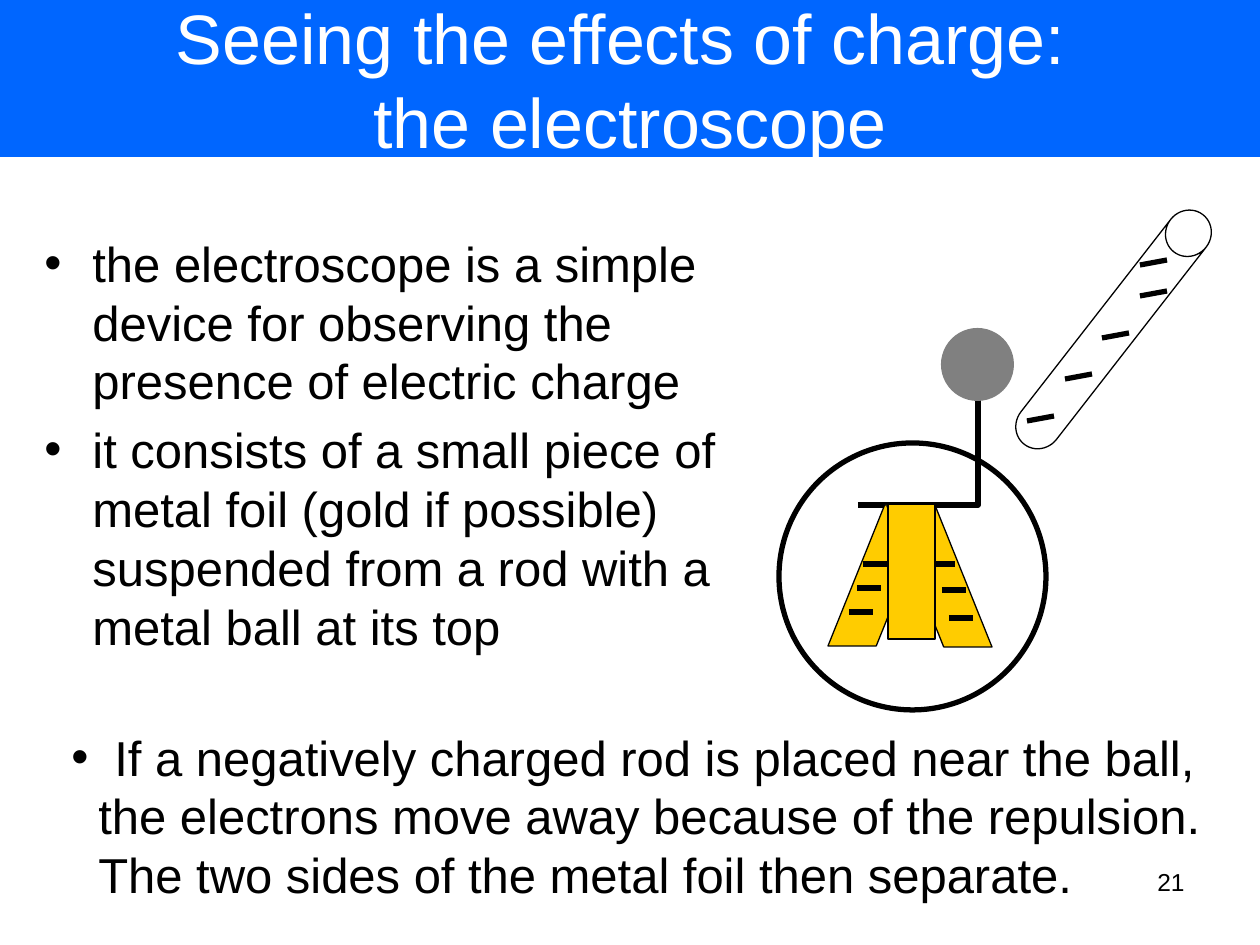
"""Build a slide that explains the electroscope."""
import pptx
import pptx.dml.color
import pptx.enum.shapes
import pptx.enum.text
import pptx.oxml
import pptx.util
from dataclasses import dataclass


@dataclass(frozen=True)
class Theme:
    font: str = "Arial"
    blue: str = "0066FF"
    gold: str = "FFCC00"
    gray: str = "808080"
    black: str = "000000"
    white: str = "FFFFFF"
    head: int = 40
    body: int = 28
    note: int = 14
    thin: float = 0.75
    thick: int = 3


THEME = Theme()
KIND = pptx.enum.shapes.MSO_SHAPE
ALIGN = pptx.enum.text.PP_ALIGN
ANCHOR = pptx.enum.text.MSO_ANCHOR
FIT = pptx.enum.text.MSO_AUTO_SIZE
NS = 'xmlns:a="http://schemas.openxmlformats.org/drawingml/2006/main"'

TITLE = "Seeing the effects of charge: \vthe electroscope"
FACTS = [
    "the electroscope is a simple device for observing the presence of electric charge",
    "it consists of a small piece of metal foil (gold if possible) "
    "suspended from a rod with a metal ball at its top",
]
EFFECT = [
    "If a negatively charged rod is placed near the ball,",
    "the electrons move away because of the repulsion.",
    "The two sides of the metal foil then separate.",
]
NUMBER = "21"

WIRE = [(858, 505), (978, 505), (978, 398)]
BALL = (941, 328, 73, 73)
ROD = (1091, 184, 45, 291)
LEAVES = [((828, 505, 105, 141), False), ((887, 506, 105, 141), True)]
STEM = (888, 504, 47, 135)
CASE = (779, 443, 267, 267)
MARKS = [
    ((27, -5), [(1027, 421), (1065, 379), (1102, 338), (1140, 296), (1140, 265)]),
    ((24, 0), [(849, 612), (857, 588), (863, 564),
               (949, 618), (942, 590), (931, 564)]),
]


def px(n):
    return pptx.util.Emu(round(n * 914400 / 126))


def rgb(code):
    return pptx.dml.color.RGBColor.from_string(code)


def paint(shape, fill=None, line=None):
    shape.shadow.inherit = False
    if fill:
        shape.fill.solid()
        shape.fill.fore_color.rgb = rgb(fill)
    else:
        shape.fill.background()
    if line:
        shape.line.color.rgb = rgb(THEME.black)
        shape.line.width = pptx.util.Pt(line)
    else:
        shape.line.fill.background()
    return shape


def draw(slide, kind, box, fill=None, line=None):
    shape = slide.shapes.add_shape(kind, *map(px, box))
    return paint(shape, fill, line)


def write(para, text, size=THEME.body, color=THEME.black, align=ALIGN.LEFT,
          left=0, hang=0, gap=0):
    para.text = text
    para.alignment = align
    para.space_before = pptx.util.Pt(gap)
    for run in para.runs:
        run.font.name = THEME.font
        run.font.size = pptx.util.Pt(size)
        run.font.color.rgb = rgb(color)
    props = para._p.get_or_add_pPr()
    props.set("marL", str(px(left)))
    props.set("indent", str(-px(hang)))
    if hang:
        props.append(pptx.oxml.parse_xml(f'<a:buFont {NS} typeface="{THEME.font}"/>'))
        props.append(pptx.oxml.parse_xml(f'<a:buChar {NS} char="•"/>'))


def frame(slide, box, wrap=True):
    text = slide.shapes.add_textbox(*map(px, box)).text_frame
    text.word_wrap = wrap
    return text


def fill_up(text, items):
    for i, (line, style) in enumerate(items):
        para = text.add_paragraph() if i else text.paragraphs[0]
        write(para, line, **style)


def tell(slide):
    head = slide.shapes.title
    head.left, head.top, head.width, head.height = map(px, (0, 0, 1260, 157))
    paint(head, THEME.blue)
    head.text_frame.auto_size = FIT.NONE
    head.text_frame.vertical_anchor = ANCHOR.MIDDLE
    write(head.text_frame.paragraphs[0], TITLE, size=THEME.head,
          color=THEME.white, align=ALIGN.CENTER)

    style = dict(left=48, hang=48, gap=THEME.body / 5)
    fill_up(frame(slide, (32, 227, 714, 474)), [(fact, style) for fact in FACTS])

    note = frame(slide, (59, 721, 1158, 189), wrap=False)
    note.auto_size = FIT.SHAPE_TO_FIT_TEXT
    styles = [dict(left=43, hang=43), dict(left=27), dict(left=27)]
    fill_up(note, zip(EFFECT, styles))

    page = frame(slide, (903, 861, 294, 66))
    write(page.paragraphs[0], NUMBER, size=THEME.note, align=ALIGN.RIGHT)


def mark(slide, start, step):
    x, y = start
    ends = (x, y, x + step[0], y + step[1])
    line = slide.shapes.add_connector(
        pptx.enum.shapes.MSO_CONNECTOR.STRAIGHT, *map(px, ends))
    line.line.color.rgb = rgb(THEME.black)
    line.line.width = pptx.util.Pt(THEME.thick)
    line._element.spPr.append(pptx.oxml.parse_xml(f"<a:effectLst {NS}/>"))


def sketch(slide):
    first, *rest = [(px(x), px(y)) for x, y in WIRE]
    path = slide.shapes.build_freeform(*first)
    path.add_line_segments(rest, close=False)
    paint(path.convert_to_shape(), line=THEME.thick)
    draw(slide, KIND.OVAL, BALL, fill=THEME.gray)

    rod = draw(slide, KIND.CAN, ROD, line=THEME.thin)
    rod.adjustments[0] = 1.05
    rod.rotation = 37.9

    for box, flip in LEAVES:
        leaf = draw(slide, KIND.PARALLELOGRAM, box, THEME.gold, THEME.thin)
        leaf.adjustments[0] = 0.54
        if flip:
            leaf._element.spPr.xfrm.set("flipH", "1")

    for step, starts in MARKS:
        for start in starts:
            mark(slide, start, step)

    draw(slide, KIND.RECTANGLE, STEM, THEME.gold, THEME.thin)
    draw(slide, KIND.OVAL, CASE, line=THEME.thick)


def main():
    deck = pptx.Presentation()
    deck.slide_width, deck.slide_height = px(1260), px(945)
    slide = deck.slides.add_slide(deck.slide_layouts[5])
    tell(slide)
    sketch(slide)
    deck.save("out.pptx")


if __name__ == "__main__":
    main()
